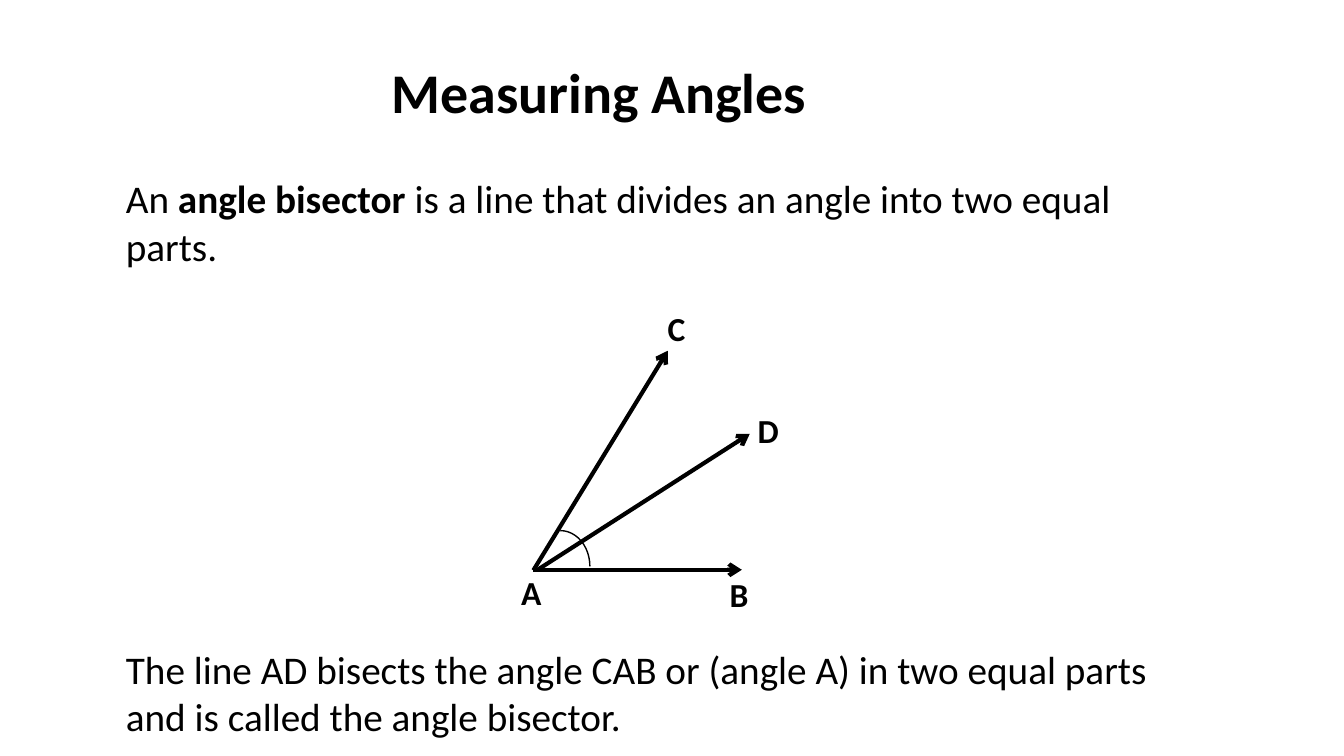
from lxml import etree
from pptx import Presentation
from pptx.dml.color import RGBColor
from pptx.enum import shapes, text
from pptx.oxml.ns import qn
from pptx.util import Cm, Pt

BLACK = "000000"


def color(value):
    return RGBColor.from_string(value)


def add_run(p, wording, size, bold):
    r = p.add_run()
    r.text = wording
    for name, value in {"name": "Calibri", "size": Pt(size), "bold": bold}.items():
        setattr(r.font, name, value)
    r.font.color.rgb = color(BLACK)


prs = Presentation()
prs.slide_width, prs.slide_height = Cm(25.4), Cm(14.29)
s = prs.slides.add_slide(prs.slide_layouts[5])

# Title
sp = s.shapes.title
place = {"left": Cm(2.11), "top": Cm(0.38), "width": Cm(18.42), "height": Cm(2.69)}
for name, value in place.items():
    setattr(sp, name, value)
tf = sp.text_frame
tf.vertical_anchor = text.MSO_ANCHOR.MIDDLE
p = tf.paragraphs[0]
p.alignment = text.PP_ALIGN.CENTER
add_run(p, "Measuring Angles", 30, True)

# Definition above the diagram, conclusion below it
tf = s.shapes.add_textbox(Cm(2.13), Cm(3.18), Cm(20.52), Cm(11.33)).text_frame
tf.word_wrap = True
p = tf.paragraphs[0]
add_run(p, "An ", 21, False)
add_run(p, "angle bisector ", 21, True)
add_run(p, "is a line that divides an angle into two equal parts.", 21, False)
p = tf.add_paragraph()
p.space_before = Pt(201.5)
add_run(p, "The line AD bisects the angle CAB or (angle A) in two equal parts "
           "and is called the angle bisector.", 21, False)

# Rays AC, AB and the bisector AD
rays = [
    (10.08, 10.78, 12.62, 6.63),
    (10.08, 10.77, 14.02, 10.77),
    (10.16, 10.77, 14.17, 8.2),
]
for ends in rays:
    ray = s.shapes.add_connector(shapes.MSO_CONNECTOR.STRAIGHT, *map(Cm, ends))
    ray.line.color.rgb = color(BLACK)
    ray.line.width = Pt(2.25)
    etree.SubElement(ray.line._get_or_add_ln(), qn("a:tailEnd"), type="arrow")
    etree.SubElement(ray._element.spPr, qn("a:effectLst"))

# Angle mark
arc = s.shapes.add_shape(shapes.MSO_SHAPE.ARC, Cm(10.03), Cm(10.03), Cm(1.12), Cm(1.35))
arc.shadow.inherit = False
arc.fill.background()
arc.line.color.rgb = color(BLACK)
arc.line.width = Pt(0.75)

# Point labels
labels = {"A": (9.6, 10.69), "B": (13.54, 10.72), "C": (12.37, 5.69), "D": (14.07, 7.62)}
for letter, (left, top) in labels.items():
    tf = s.shapes.add_textbox(Cm(left), Cm(top), Cm(0.97), Cm(1.02)).text_frame
    tf.word_wrap = True
    tf.auto_size = text.MSO_AUTO_SIZE.SHAPE_TO_FIT_TEXT
    add_run(tf.paragraphs[0], letter, 18, True)

prs.save("out.pptx")
